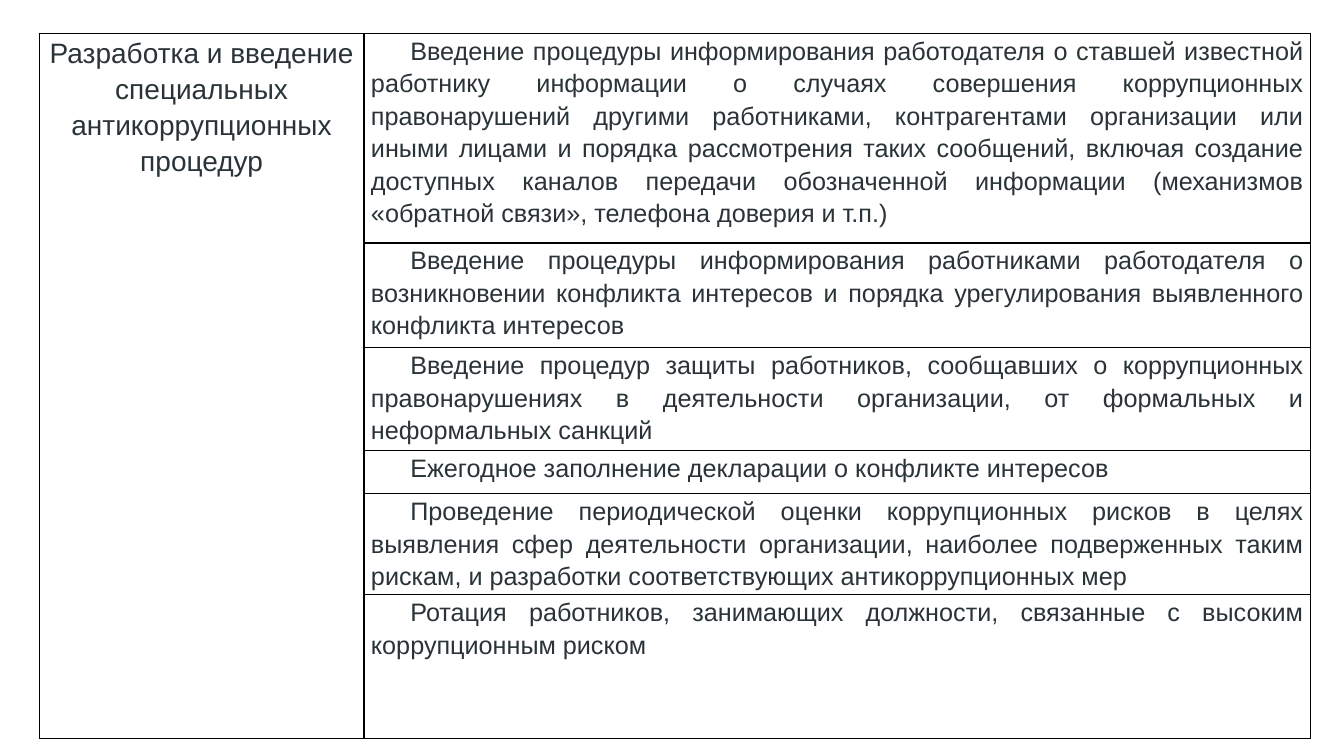
from pptx import Presentation
from pptx.dml.color import RGBColor
from pptx.enum.text import PP_ALIGN as ALIGN
from pptx.oxml import parse_xml
from pptx.oxml.ns import nsdecls
from pptx.util import Inches, Pt

COLORS = {"text": "2A3438", "border": "000000"}
FONT = "Arial"
COL_WIDTHS = [3.22, 9.39]
HEADING = "Разработка и введение специальных антикоррупционных процедур"
# Row height in inches and the measure it holds
MEASURES = [
    (2.08, "Введение процедуры информирования работодателя о ставшей известной "
           "работнику информации о случаях совершения коррупционных правонарушений "
           "другими работниками, контрагентами организации или иными лицами и порядка "
           "рассмотрения таких сообщений, включая создание доступных каналов передачи "
           "обозначенной информации (механизмов «обратной связи», телефона доверия и т.п.)"),
    (1.04, "Введение процедуры информирования работниками работодателя о возникновении "
           "конфликта интересов и порядка урегулирования выявленного конфликта интересов"),
    (1.02, "Введение процедур защиты работников, сообщавших о коррупционных "
           "правонарушениях в деятельности организации, от формальных и неформальных санкций"),
    (0.43, "Ежегодное заполнение декларации о конфликте интересов"),
    (1.0, "Проведение периодической оценки коррупционных рисков в целях выявления сфер "
          "деятельности организации, наиболее подверженных таким рискам, и разработки "
          "соответствующих антикоррупционных мер"),
    (1.43, "Ротация работников, занимающих должности, связанные с высоким "
           "коррупционным риском"),
]


def set_borders(cell):
    tcPr = cell._tc.get_or_add_tcPr()
    for i, side in enumerate("LRTB"):
        tcPr.insert(i, parse_xml(
            f'<a:ln{side} {nsdecls("a")} w="{Pt(1)}"><a:solidFill>'
            f'<a:srgbClr val="{COLORS["border"]}"/></a:solidFill></a:ln{side}>'))


def write_cell(cell, text, size, align, indent=0):
    cell.text = text
    p = cell.text_frame.paragraphs[0]
    p.alignment = align
    p.line_spacing = 1.15
    pPr = p._p.get_or_add_pPr()
    pPr.set("marL", "0")
    pPr.set("indent", str(Inches(indent)))
    font = p.runs[0].font
    font.name = FONT
    font.size = Pt(size)
    font.color.rgb = RGBColor.from_string(COLORS["text"])


def add_measures_table(slide, left, top):
    heights = [height for height, _ in MEASURES]
    frame = slide.shapes.add_table(
        len(MEASURES), len(COL_WIDTHS), Inches(left), Inches(top),
        Inches(sum(COL_WIDTHS)), Inches(sum(heights)))
    table = frame.table
    table.first_row = table.horz_banding = False
    for col, width in zip(table.columns, COL_WIDTHS):
        col.width = Inches(width)
    for row, height in zip(table.rows, heights):
        row.height = Inches(height)
    for cell in table.iter_cells():
        cell.margin_left = cell.margin_right = Inches(0.07)
        cell.margin_top = cell.margin_bottom = 0
        cell.fill.background()
        set_borders(cell)

    table.cell(0, 0).merge(table.cell(len(MEASURES) - 1, 0))
    write_cell(table.cell(0, 0), HEADING, 20, ALIGN.CENTER)
    for i, (_, text) in enumerate(MEASURES):
        write_cell(table.cell(i, 1), text, 18, ALIGN.JUSTIFY, 0.39)


def main():
    prs = Presentation()
    prs.slide_width = Inches(13.33)
    prs.slide_height = Inches(7.5)
    slide = prs.slides.add_slide(prs.slide_layouts[6])
    add_measures_table(slide, 0.39, 0.33)
    prs.save("out.pptx")


if __name__ == "__main__":
    main()
